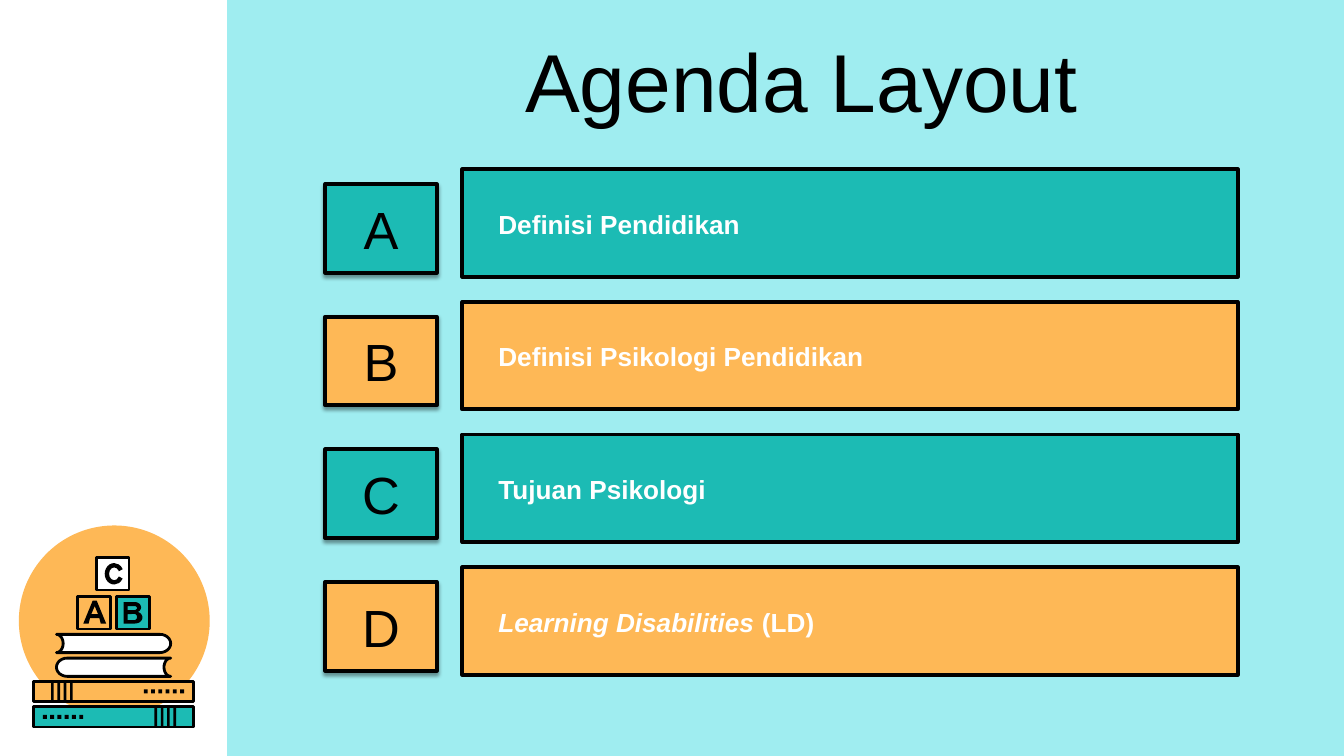
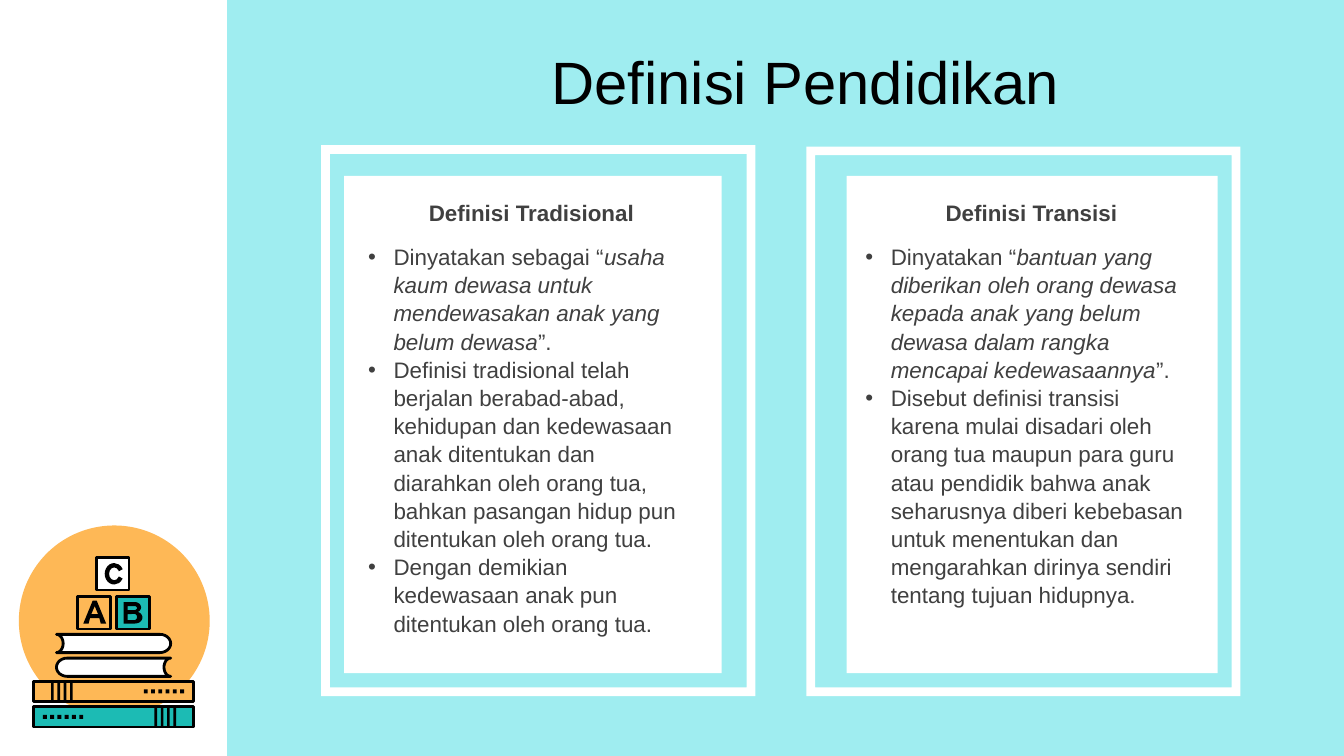
import math

import lxml.etree
import pptx
import pptx.dml.color
import pptx.enum.shapes
import pptx.enum.text
import pptx.oxml.ns
import pptx.util

COLS, ROWS = 100, 56.25
WIDTH, HEIGHT = pptx.util.Inches(10), pptx.util.Inches(5.625)
FONT = "Arial"
COLORS = {
    "sky": "9FEDF0",
    "teal": "1CBBB4",
    "orange": "FEB856",
    "black": "000000",
    "white": "FFFFFF",
    "grey": "404040",
}
SHAPE = pptx.enum.shapes.MSO_SHAPE
ALIGN = pptx.enum.text.PP_ALIGN
ANCHOR = pptx.enum.text.MSO_ANCHOR
qn = pptx.oxml.ns.qn


def x(col):
    return round(WIDTH * col / COLS)


def y(row):
    return round(HEIGHT * row / ROWS)


def rgb(name):
    return pptx.dml.color.RGBColor.from_string(COLORS[name])


def arc(cx, cy, rx, ry, start, end, steps=12):
    """Points along an ellipse, in degrees clockwise from the right."""
    angles = [math.radians(start + (end - start) * i / steps) for i in range(steps + 1)]
    return [(cx + rx * math.cos(a), cy + ry * math.sin(a)) for a in angles]


class Deck:
    """Holds the presentation, its style and the slide being filled."""

    def __init__(self):
        self.prs = pptx.Presentation()
        self.prs.slide_width, self.prs.slide_height = WIDTH, HEIGHT
        self.shapes = None

    def slide(self, title, left, top, width, height, size):
        s = self.prs.slides.add_slide(self.prs.slide_layouts[6])
        self.shapes = s.shapes
        self.shape((16.9, 0, 83.1, ROWS), "sky")
        self.shapes = s.shapes.add_group_shape().shapes
        self.emblem()
        self.shapes = s.shapes
        self.text((left, top, width, height), [[(title, "")]], size, "black",
                  align=ALIGN.CENTER, anchor=ANCHOR.MIDDLE)

    def paint(self, sp, fill, line=None):
        sp.shadow.inherit = False
        sp.fill.solid()
        sp.fill.fore_color.rgb = rgb(fill)
        if line:
            sp.line.color.rgb = rgb("black")
            sp.line.width = pptx.util.Pt(line)
        else:
            sp.line.fill.background()
        return sp

    def shape(self, box, fill, line=None, kind=SHAPE.RECTANGLE, adjust=()):
        left, top, width, height = box
        sp = self.shapes.add_shape(kind, x(left), y(top), x(width), y(height))
        for i, value in enumerate(adjust):
            sp.adjustments[i] = value
        return self.paint(sp, fill, line)

    def outline(self, contours, fill, line=None):
        """Draw closed contours as one freeform; inner contours are holes."""
        points = [[(x(col), y(row)) for col, row in contour] for contour in contours]
        builder = self.shapes.build_freeform(*points[0][0], scale=1.0)
        builder.add_line_segments(points[0][1:], close=True)
        for contour in points[1:]:
            builder.move_to(*contour[0])
            builder.add_line_segments(contour[1:], close=True)
        return self.paint(builder.convert_to_shape(), fill, line)

    def drop_shadow(self, sp):
        effects = sp._element.spPr.find(qn("a:effectLst"))
        shadow = lxml.etree.SubElement(effects, qn("a:outerShdw"), blurRad="25400",
                                       dist="19050", dir="5400000", rotWithShape="0")
        color = lxml.etree.SubElement(shadow, qn("a:srgbClr"), val=COLORS["black"])
        lxml.etree.SubElement(color, qn("a:alpha"), val="40000")

    def bullet(self, p):
        pPr = p._p.get_or_add_pPr()
        indent = pptx.util.Inches(0.19)
        pPr.set("marL", str(indent))
        pPr.set("indent", str(-indent))
        lxml.etree.SubElement(pPr, qn("a:buFont"), typeface=FONT)
        lxml.etree.SubElement(pPr, qn("a:buChar"), char="•")

    def add_text(self, tf, paragraphs, size, color, align=ALIGN.LEFT, bullets=False):
        """Fill a frame; each run is (text, style), style letters being b and i."""
        for i, runs in enumerate(paragraphs):
            p = tf.add_paragraph() if i else tf.paragraphs[0]
            if bullets:
                self.bullet(p)
                p.line_spacing = 1.05
            p.alignment = align
            for text, style in runs:
                r = p.add_run()
                r.text = text
                r.font.name = FONT
                r.font.size = pptx.util.Pt(size)
                r.font.color.rgb = rgb(color)
                r.font.bold = "b" in style
                r.font.italic = "i" in style

    def text(self, box, paragraphs, size, color, anchor=ANCHOR.TOP, **options):
        left, top, width, height = box
        sp = self.shapes.add_textbox(x(left), y(top), x(width), y(height))
        tf = sp.text_frame
        tf.word_wrap = True
        tf.vertical_anchor = anchor
        self.add_text(tf, paragraphs, size, color, **options)

    def badge(self, box, fill, letter):
        sp = self.shape(box, fill, 2)
        self.drop_shadow(sp)
        tf = sp.text_frame
        tf.word_wrap = False
        tf.vertical_anchor = ANCHOR.MIDDLE
        self.add_text(tf, [[(letter, "")]], 28, "black", align=ALIGN.CENTER)

    def closed_book(self, top, fill, mirrored):
        left, width = 2.5, 11.9
        self.shape((left, top, width, 1.5), fill, 1.5)
        stripes = [(3.8 + 0.47 * i, top, 0.2, 1.5) for i in range(4)]
        dashes = [(10.7 + 0.54 * i, top + 0.6, 0.3, 0.3) for i in range(6)]
        for col, row, w, h in stripes + dashes:
            if mirrored:
                col = 2 * left + width - col - w
            self.shape((col, row, w, h), "black")

    def open_book(self, top, mirrored):
        left, right, half = 4.2, 12.7, 0.68
        middle = top + half
        points = (arc(right - 0.8, middle, 0.8, half, -90, 90)
                  + arc(left, middle, 0.5, half, 90, -90))
        if mirrored:
            points = [(left + right - col, row) for col, row in points]
        self.outline([points], "white", 1.5)

    def emblem(self):
        """Toy blocks on a pile of books, in front of a disc."""
        self.shape((1.4, 39.1, 14.2, 14.2), "orange", kind=SHAPE.OVAL)
        self.closed_book(50.7, "orange", False)
        self.closed_book(52.6, "teal", True)
        for col, row, fill in ((5.8, 44.4, "orange"), (8.7, 44.4, "teal"),
                               (7.2, 41.5, "white")):
            self.shape((col, row, 2.4, 2.4), fill, 1.5)
        letter_a = [(6.9, 44.7), (7.2, 44.7), (7.9, 46.4), (7.5, 46.4),
                    (7.4, 46), (6.7, 46), (6.6, 46.4), (6.2, 46.4)]
        self.outline([letter_a, [(7.05, 45.1), (6.8, 45.7), (7.3, 45.7)]], "black")
        letter_b = ([(9.2, 46.4), (9.2, 44.8)]
                    + arc(10, 45.2, 0.5, 0.4, -90, 90)
                    + arc(10.05, 45.95, 0.55, 0.45, -60, 90))
        upper_hole = [(9.5, 45.4), (9.5, 45.1)] + arc(10, 45.25, 0.2, 0.15, -90, 90)
        lower_hole = [(9.5, 46.15), (9.5, 45.7)] + arc(10, 45.92, 0.2, 0.23, -90, 90)
        self.outline([letter_b, upper_hole, lower_hole], "black")
        self.shape((7.8, 41.9, 1.4, 1.6), "black", kind=SHAPE.BLOCK_ARC,
                   adjust=(17.57, 198.9, 0.23))
        self.open_book(47.2, False)
        self.open_book(48.97, True)

    def agenda(self, items):
        pitch = 9.87
        for i, (letter, runs) in enumerate(items):
            fill = ("teal", "orange")[i % 2]
            shift = i * pitch
            self.badge((24.2, 13.7 + shift, 8.3, 6.6), fill, letter)
            self.shape((34.4, 12.6 + shift, 57.7, 8), fill, 2)
            self.text((36.1, 15 + shift, 52, 3.4), [runs], 14, "white")

    def card(self, frame, panel, heading_box, body_box, heading, points):
        self.shape(frame, "white", kind=SHAPE.FRAME, adjust=(0.02,))
        self.shape(panel, "white")
        self.text(body_box, points, 12, "grey", bullets=True)
        self.text(heading_box, [[(heading, "b")]], 12, "grey", align=ALIGN.CENTER)


def main():
    deck = Deck()

    deck.slide("Agenda Layout", 19.3, 1.7, 80.7, 8.5, 44)
    deck.agenda([
        ("A", [("Definisi Pendidikan", "b")]),
        ("B", [("Definisi Psikologi Pendidikan", "b")]),
        ("C", [("Tujuan Psikologi", "b")]),
        ("D", [("Learning Disabilities ", "bi"), ("(LD)", "b")]),
    ])

    deck.slide("Definisi Pendidikan", 20.2, 2.4, 79.5, 7.2, 32)
    deck.card(
        (23.9, 10.8, 32.3, 41), (25.6, 13.1, 28.1, 37),
        (25.6, 14.3, 27.9, 3.6), (26.4, 17.5, 26.3, 30),
        "Definisi Tradisional",
        [
            [("Dinyatakan sebagai “", ""),
             ("usaha kaum dewasa untuk mendewasakan anak yang belum dewasa", "i"),
             ("”.", "")],
            [("Definisi tradisional telah berjalan berabad-abad, kehidupan dan "
              "kedewasaan anak ditentukan dan diarahkan oleh orang tua, bahkan "
              "pasangan hidup pun ditentukan oleh orang tua.", "")],
            [("Dengan demikian kedewasaan anak pun ditentukan oleh orang tua.", "")],
        ])
    deck.card(
        (60, 10.9, 32.3, 40.9), (63, 13.1, 27.6, 37),
        (63.4, 14.3, 26.7, 3.1), (63.4, 17.5, 25.7, 31.3),
        "Definisi Transisi",
        [
            [("Dinyatakan “", ""),
             ("bantuan yang diberikan oleh orang dewasa kepada anak yang belum "
              "dewasa dalam rangka mencapai kedewasaannya", "i"),
             ("”.", "")],
            [("Disebut definisi transisi karena mulai disadari oleh orang tua "
              "maupun para guru atau pendidik bahwa anak seharusnya diberi "
              "kebebasan untuk menentukan dan mengarahkan dirinya sendiri "
              "tentang tujuan hidupnya.", "")],
        ])

    deck.prs.save("out.pptx")


if __name__ == "__main__":
    main()
